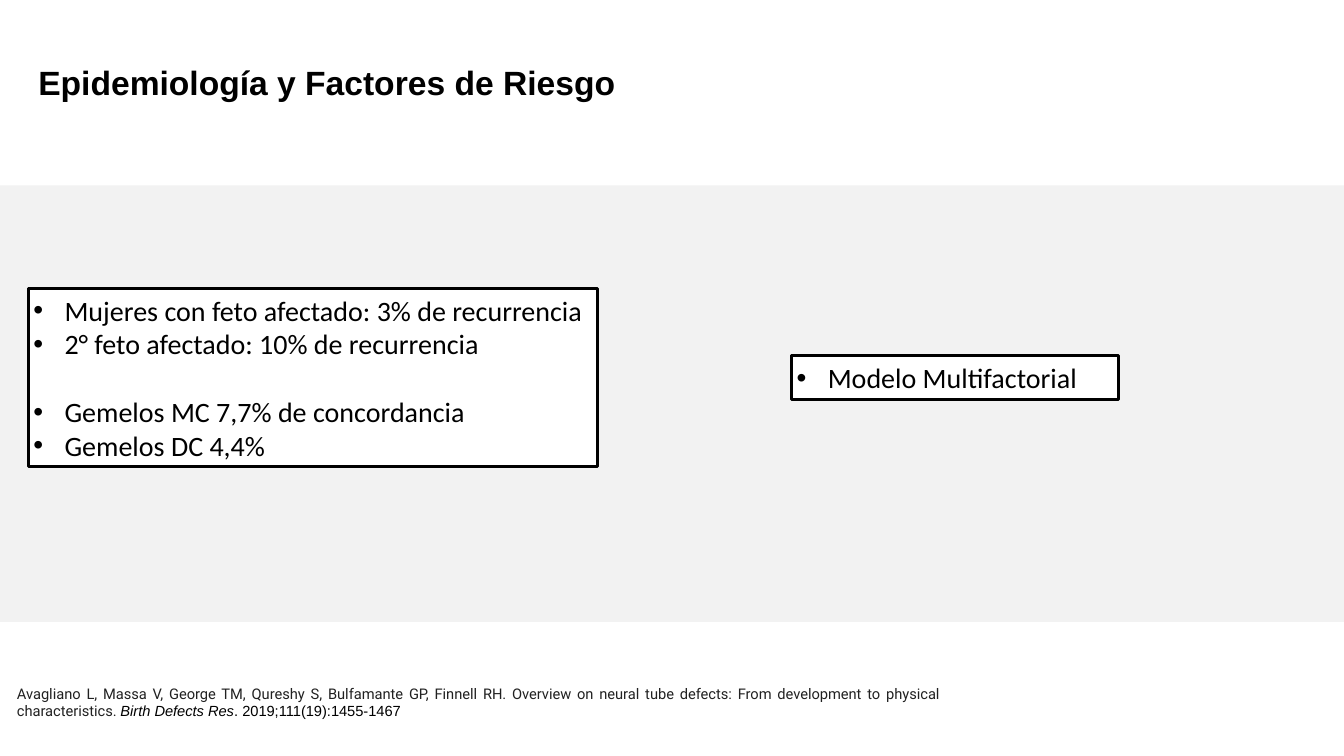
from lxml import etree
from pptx import Presentation
from pptx.dml.color import RGBColor
from pptx.enum.shapes import MSO_SHAPE
from pptx.enum.text import MSO_ANCHOR, MSO_AUTO_SIZE, PP_ALIGN
from pptx.oxml.ns import qn
from pptx.util import Inches, Pt

RECTANGLE = MSO_SHAPE.RECTANGLE
TOP, MIDDLE = MSO_ANCHOR.TOP, MSO_ANCHOR.MIDDLE
NO_AUTOFIT = MSO_AUTO_SIZE.NONE
LEFT, JUSTIFY = PP_ALIGN.LEFT, PP_ALIGN.JUSTIFY
COLORS = {"black": "000000", "white": "FFFFFF", "band": "F2F2F2", "citation": "212121"}


def place(shape, left, top, width, height):
    shape.left, shape.top = Inches(left), Inches(top)
    shape.width, shape.height = Inches(width), Inches(height)


def style(font, name, size, color):
    font.name = name
    font.size = Pt(size)
    font.color.rgb = RGBColor.from_string(COLORS[color])


presentation = Presentation()
presentation.slide_width = Inches(13.33)
presentation.slide_height = Inches(7.5)
slide = presentation.slides.add_slide(presentation.slide_layouts.get_by_name("Two Content"))
title, recurrence_box, model_box = slide.placeholders

band = slide.shapes.add_shape(RECTANGLE, 0, Inches(1.84), presentation.slide_width, Inches(4.33))
band.shadow.inherit = False
band.fill.solid()
band.fill.fore_color.rgb = RGBColor.from_string(COLORS["band"])
band.line.fill.background()
title.element.addprevious(band.element)

place(title, 0.28, 0.56, 7.31, 0.5)
title.text_frame.text = "Epidemiología y Factores de Riesgo"
title.text_frame.auto_size = NO_AUTOFIT
title.text_frame.vertical_anchor = MIDDLE
heading = title.text_frame.paragraphs[0]
heading.alignment = LEFT
style(heading.runs[0].font, "Arial", 24, "black")
heading.runs[0].font.bold = True

lists = [
    (recurrence_box, (0.28, 2.86, 5.65, 1.77), [
        ("Mujeres con feto afectado: 3% de recurrencia", 0),
        ("2° feto afectado: 10% de recurrencia", 0),
        ("Gemelos MC 7,7% de concordancia", 24.4),
        ("Gemelos DC 4,4%", 0),
    ]),
    (model_box, (7.85, 3.53, 3.24, 0.43), [("Modelo Multifactorial", 0)]),
]
for box, position, items in lists:
    place(box, *position)
    box.fill.solid()
    box.fill.fore_color.rgb = RGBColor.from_string(COLORS["white"])
    box.line.color.rgb = RGBColor.from_string(COLORS["black"])
    box.line.width = Pt(2)
    frame = box.text_frame
    frame.text = "\n".join(text for text, gap in items)
    frame.word_wrap = True
    frame.auto_size = NO_AUTOFIT
    frame.vertical_anchor = TOP
    frame.margin_left = frame.margin_right = Inches(0.05)
    frame.margin_top = frame.margin_bottom = Inches(0.05)
    for paragraph, (text, gap) in zip(frame.paragraphs, items):
        properties = paragraph._p.get_or_add_pPr()
        properties.set("marL", str(Inches(0.31)))
        properties.set("indent", str(-Inches(0.31)))
        bullet_color = etree.SubElement(properties, qn("a:buClr"))
        etree.SubElement(bullet_color, qn("a:srgbClr"), val=COLORS["black"])
        etree.SubElement(properties, qn("a:buFont"), typeface="Arial")
        etree.SubElement(properties, qn("a:buChar"), char="•")
        paragraph.space_before = Pt(gap)
        style(paragraph.runs[0].font, "Calibri", 20, "black")

citation = slide.shapes.add_textbox(Inches(0.07), Inches(6.74), Inches(9.36), Inches(0.4))
citation.text_frame.word_wrap = True
reference = citation.text_frame.paragraphs[0]
reference.alignment = JUSTIFY
for text, font_name, color, italic in [
    ("Avagliano L, Massa V, George TM, Qureshy S, Bulfamante GP, Finnell RH. Overview on neural "
     "tube defects: From development to physical characteristics. ", "Roboto", "citation", False),
    ("Birth Defects Res", "Arial", "black", True),
    (". 2019;111(19):1455-1467", "Arial", "black", False),
]:
    run = reference.add_run()
    run.text = text
    style(run.font, font_name, 10.5, color)
    run.font.italic = italic

presentation.save("out.pptx")
